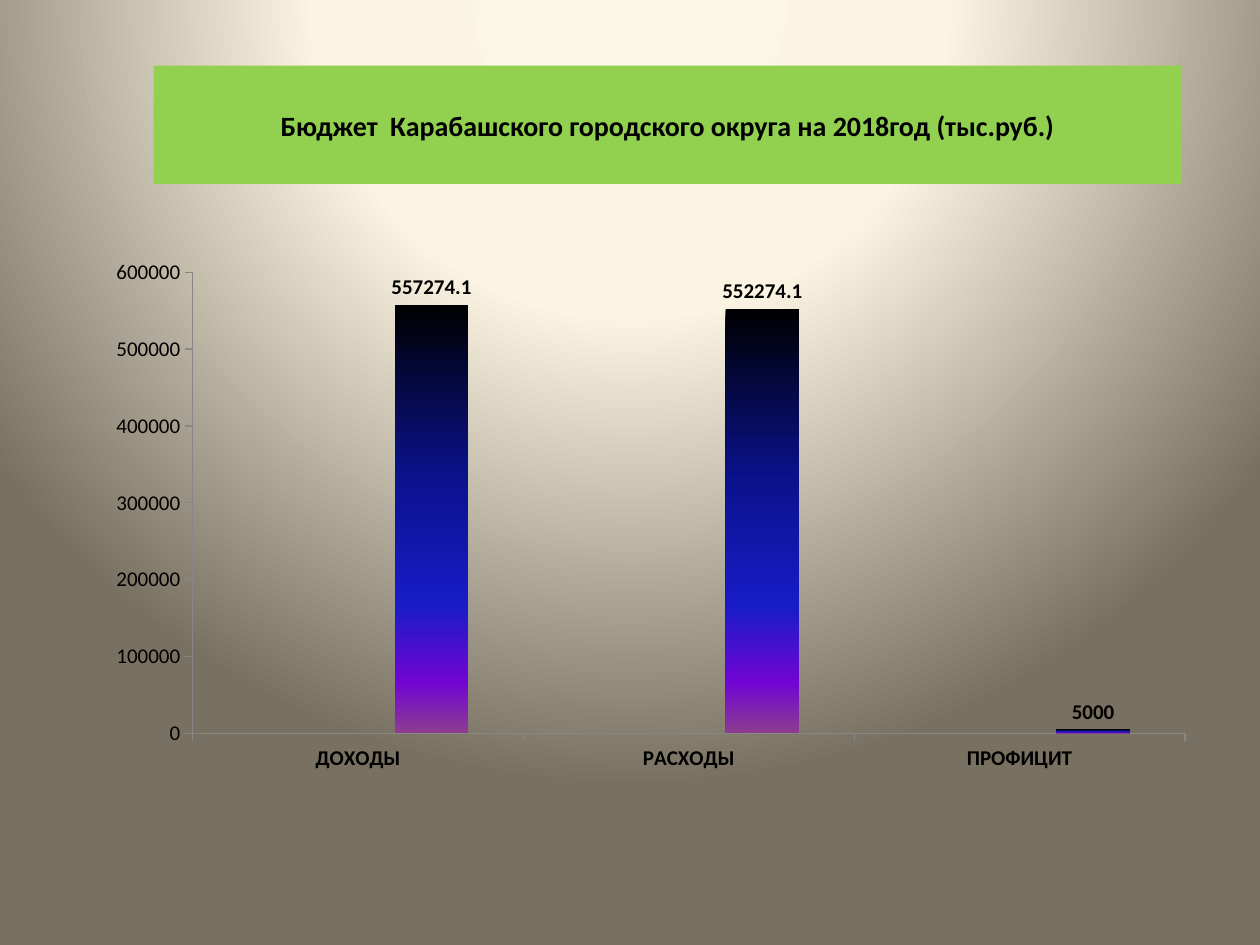
from lxml import etree
from pptx import Presentation
from pptx.chart.data import CategoryChartData
from pptx.dml.color import RGBColor
from pptx.enum.chart import XL_CHART_TYPE, XL_LABEL_POSITION, XL_TICK_MARK
from pptx.enum.shapes import MSO_SHAPE
from pptx.enum.text import MSO_ANCHOR, PP_ALIGN
from pptx.oxml.ns import qn
from pptx.util import Pt

COLUMN = XL_CHART_TYPE.COLUMN_CLUSTERED
OUTSIDE_END = XL_LABEL_POSITION.OUTSIDE_END
TICK_OUT, TICK_NONE = XL_TICK_MARK.OUTSIDE, XL_TICK_MARK.NONE
RECT = MSO_SHAPE.RECTANGLE
MIDDLE = MSO_ANCHOR.MIDDLE
CENTER = PP_ALIGN.CENTER

BLACK = RGBColor(0x00, 0x00, 0x00)
GREEN = RGBColor(0x92, 0xD0, 0x50)
GRAY = RGBColor(0x87, 0x87, 0x87)
ORANGE = RGBColor(0xF0, 0x7F, 0x09)
RED = RGBColor(0x9F, 0x29, 0x36)
CREAM = RGBColor(0xFC, 0xF6, 0xE6)
IVORY = RGBColor(0xFB, 0xF4, 0xE2)
TAUPE = RGBColor(0x78, 0x71, 0x61)
NAVY = RGBColor(0x0A, 0x12, 0x8C)
BLUE = RGBColor(0x18, 0x1C, 0xC7)
VIOLET = RGBColor(0x70, 0x05, 0xD4)
PLUM = RGBColor(0x8C, 0x3D, 0x91)

BACKGROUND_STOPS = [(0, CREAM), (40, IVORY), (100, TAUPE)]
BAR_STOPS = [(0, BLACK), (40, NAVY), (70, BLUE), (88, VIOLET), (100, PLUM)]
CATEGORIES = ["ДОХОДЫ", "РАСХОДЫ", "ПРОФИЦИТ"]
BUDGET = [557274.1, 552274.1, 5000]


class SlideBuilder:
    font = "Calibri"

    def __init__(self, s):
        self.s = s

    def style(self, font, size, bold=False):
        font.name = self.font
        font.size = Pt(size)
        font.bold = bold
        font.color.rgb = BLACK

    def gradient(self, fill, root, stops):
        fill.gradient()
        grad = root.find(".//" + qn("a:gradFill"))
        for child in list(grad):
            grad.remove(child)
        stop_list = etree.SubElement(grad, qn("a:gsLst"))
        for pos, color in stops:
            stop = etree.SubElement(stop_list, qn("a:gs"), pos=str(pos * 1000))
            etree.SubElement(stop, qn("a:srgbClr"), val=str(color))
        return grad

    def background(self, stops):
        grad = self.gradient(self.s.background.fill, self.s.element, stops)
        path = etree.SubElement(grad, qn("a:path"), path="circle")
        etree.SubElement(path, qn("a:fillToRect"),
                         l="50000", t="-80000", r="50000", b="180000")

    def banner(self, x, y, w, h, text):
        sp = self.s.shapes.add_shape(RECT, Pt(x), Pt(y), Pt(w), Pt(h))
        sp.shadow.inherit = False
        sp.fill.solid()
        sp.fill.fore_color.rgb = GREEN
        sp.line.fill.background()
        tf = sp.text_frame
        tf.word_wrap = True
        tf.vertical_anchor = MIDDLE
        tf.text = text
        p = tf.paragraphs[0]
        p.alignment = CENTER
        self.style(p.runs[0].font, 16, True)

    def axis(self, axis, bold):
        axis.has_major_gridlines = False
        axis.major_tick_mark = TICK_OUT
        axis.minor_tick_mark = TICK_NONE
        axis.format.line.color.rgb = GRAY
        axis.format.line.width = Pt(0.75)
        self.style(axis.tick_labels.font, 12, bold)

    def plot_layout(self, plot_area, x, y, w, h):
        for old in plot_area.findall(qn("c:layout")):
            plot_area.remove(old)
        layout = etree.Element(qn("c:layout"))
        plot_area.insert(0, layout)
        manual = etree.SubElement(layout, qn("c:manualLayout"))
        settings = [("layoutTarget", "inner"), ("xMode", "edge"), ("yMode", "edge"),
                    ("x", x), ("y", y), ("w", w), ("h", h)]
        for tag, val in settings:
            etree.SubElement(manual, qn("c:" + tag), val=str(val))

    def column_chart(self, x, y, w, h, categories, values):
        data = CategoryChartData()
        data.categories = categories
        blank = [None] * len(categories)
        for number, row in enumerate([blank, blank, values], 1):
            data.add_series(f"Series {number}", row)
        chart = self.s.shapes.add_chart(COLUMN, Pt(x), Pt(y), Pt(w), Pt(h), data).chart
        chart.has_legend = False
        chart.has_title = False
        self.style(chart.font, 12)
        self.axis(chart.category_axis, True)
        self.axis(chart.value_axis, False)
        chart.value_axis.minimum_scale = 0
        chart.value_axis.maximum_scale = 600000
        chart.value_axis.major_unit = 100000

        plot = chart.plots[0]
        plot.gap_width = 150
        plot.overlap = 0
        plot.vary_by_categories = False
        first, second, budget = plot.series
        for series, color in ((first, ORANGE), (second, RED)):
            series.format.fill.solid()
            series.format.fill.fore_color.rgb = color
        grad = self.gradient(budget.format.fill, budget._element, BAR_STOPS)
        etree.SubElement(grad, qn("a:lin"), ang="5400000", scaled="0")
        labels = budget.data_labels
        labels.show_value = True
        labels.position = OUTSIDE_END
        self.style(labels.font, 12, True)
        self.plot_layout(chart._chartSpace.find(".//" + qn("c:plotArea")),
                         0.09, 0.05, 0.91, 0.83)


def main():
    prs = Presentation()
    prs.slide_width, prs.slide_height = Pt(720), Pt(540)
    slide = SlideBuilder(prs.slides.add_slide(prs.slide_layouts[6]))
    slide.background(BACKGROUND_STOPS)
    slide.column_chart(54, 139.7, 623.5, 317.5, CATEGORIES, BUDGET)
    slide.banner(87.8, 37.5, 587.5, 67.7,
                 "Бюджет  Карабашского городского округа на 2018год (тыс.руб.)")
    prs.save("out.pptx")


if __name__ == "__main__":
    main()
